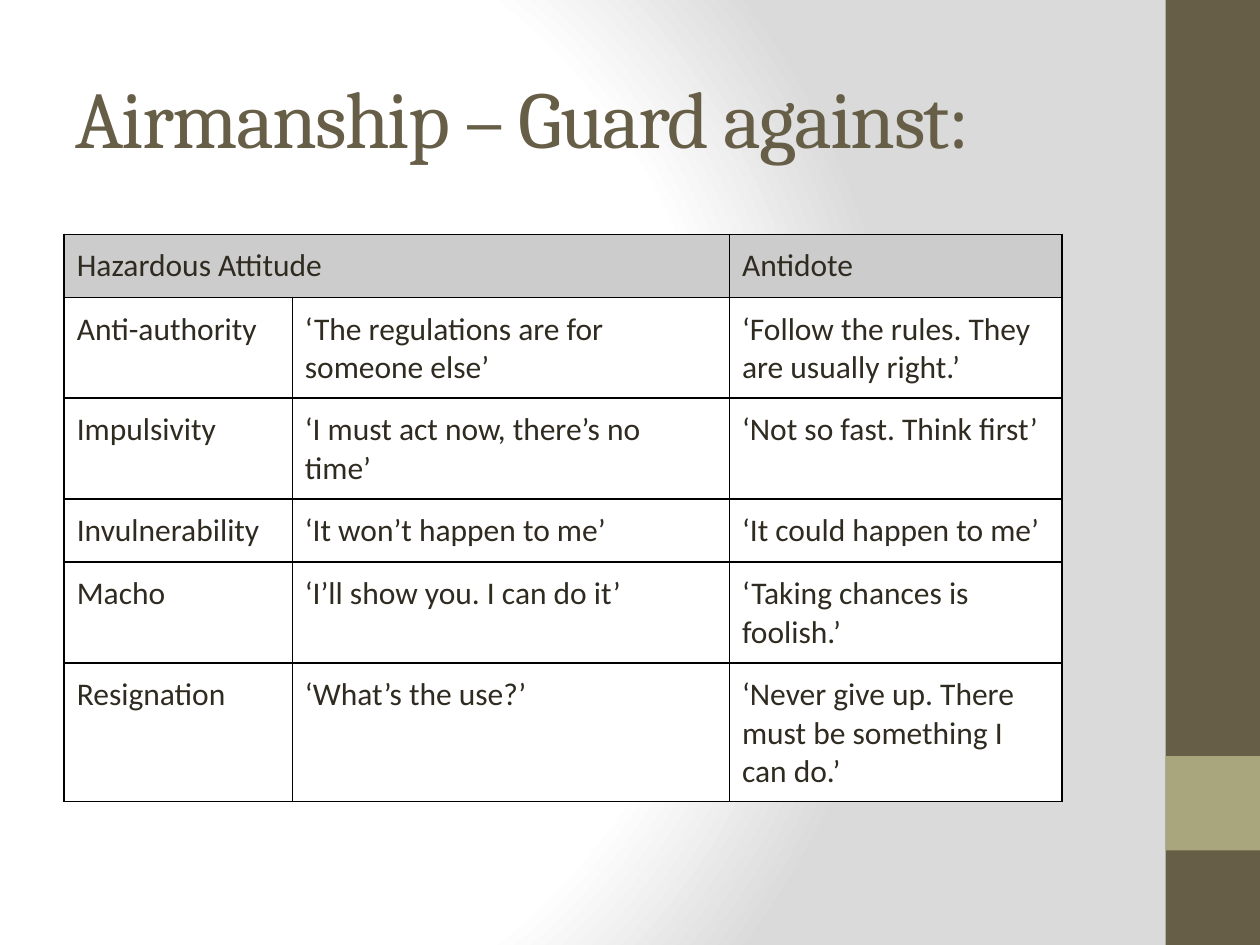
from pptx import Presentation, oxml
from pptx import util as u
from pptx.dml.color import RGBColor
from pptx.enum import shapes, text
from pptx.oxml import ns

INK, BROWN, SAGE = "2F2B20", "675E47", "A9A57C"
WHITE, HEADER, BORDER = "FFFFFF", "CCCCCC", "000000"
BACKDROP_STOPS = [(0, WHITE), (75, WHITE), (100, "DADADA")]

COLUMN_WIDTHS = [1.81, 3.47, 2.64]
ROW_HEIGHT = 0.42
ATTITUDES = [
    ("Hazardous Attitude", "", "Antidote"),
    ("Anti-authority", "‘The regulations are for\nsomeone else’",
     "‘Follow the rules. They are usually right.’"),
    ("Impulsivity", "‘I must act now, there’s no\ntime’",
     "‘Not so fast. Think first’"),
    ("Invulnerability", "‘It won’t happen to me’", "‘It could happen to me’"),
    ("Macho", "‘I’ll show you. I can do it’", "‘Taking chances is foolish.’"),
    ("Resignation", "‘What’s the use?’",
     "‘Never give up. There must be something I can do.’"),
]


def rgb(value):
    return RGBColor.from_string(value)


def apply(target, values):
    for name, value in values.items():
        setattr(target, name, value)


class SlideBuilder:
    heading = {"name": "Cambria", "size": u.Pt(46)}
    body = {"name": "Calibri", "size": u.Pt(18)}
    cell_format = {f"margin_{side}": u.Inches(0.1)
                   for side in ("left", "right", "top", "bottom")}

    def __init__(self, slide):
        self.slide = slide

    def backdrop(self, stops):
        """Fill the background with a circular gradient."""
        marks = "".join(
            f'<a:gs pos="{position * 1000}"><a:srgbClr val="{color}"/></a:gs>'
            for position, color in stops)
        self.slide.element.cSld.insert(0, oxml.parse_xml(
            f'<p:bg {ns.nsdecls("p", "a")}><p:bgPr><a:gradFill rotWithShape="1">'
            f'<a:gsLst>{marks}</a:gsLst><a:path path="circle">'
            '<a:fillToRect l="20000" t="50000" r="100000" b="50000"/></a:path>'
            '</a:gradFill><a:effectLst/></p:bgPr></p:bg>'))

    def block(self, box, color):
        bar = self.slide.shapes.add_shape(
            shapes.MSO_SHAPE.RECTANGLE, *map(u.Inches, box))
        bar.shadow.inherit = False
        bar.fill.solid()
        bar.fill.fore_color.rgb = rgb(color)
        bar.line.fill.background()

    def set_text(self, frame, content, font, color):
        frame.text = content
        for paragraph in frame.paragraphs:
            for run in paragraph.runs:
                apply(run.font, font)
                run.font.color.rgb = rgb(color)

    def title(self, box, content):
        frame = self.slide.shapes.add_textbox(*map(u.Inches, box)).text_frame
        apply(frame, {"word_wrap": True,
                      "vertical_anchor": text.MSO_ANCHOR.MIDDLE})
        self.set_text(frame, content, self.heading, BROWN)
        frame.paragraphs[0].runs[0].font._element.set("spc", "-100")

    def outline(self, cell):
        """Draw thin lines on all four sides of a table cell."""
        properties = cell._tc.get_or_add_tcPr()
        for index, side in enumerate(("lnL", "lnR", "lnT", "lnB")):
            properties.insert(index, oxml.parse_xml(
                f'<a:{side} {ns.nsdecls("a")} w="{u.Pt(1)}"><a:solidFill>'
                f'<a:srgbClr val="{BORDER}"/></a:solidFill></a:{side}>'))

    def table(self, box, rows, widths):
        holder = self.slide.shapes.add_table(
            len(rows), len(widths), *map(u.Inches, box))
        grid = holder.table
        for column, width in zip(grid.columns, widths):
            column.width = u.Inches(width)
        for r, row in enumerate(rows):
            grid.rows[r].height = u.Inches(ROW_HEIGHT)
            for c, content in enumerate(row):
                cell = grid.cell(r, c)
                apply(cell, self.cell_format)
                cell.fill.solid()
                cell.fill.fore_color.rgb = rgb(WHITE if r else HEADER)
                self.outline(cell)
                self.set_text(cell.text_frame, content, self.body, INK)
        grid.cell(0, 0).merge(grid.cell(0, 1))
        holder.height = u.Inches(box[3])


def main():
    deck = Presentation()
    apply(deck, {"slide_width": u.Inches(10), "slide_height": u.Inches(7.5)})
    builder = SlideBuilder(deck.slides.add_slide(deck.slide_layouts[6]))
    builder.backdrop(BACKDROP_STOPS)
    builder.block((9.25, 0, 0.75, 7.5), BROWN)
    builder.block((9.25, 6, 0.75, 0.75), SAGE)
    builder.title((0.5, 0.3, 8.33, 1.25), "Airmanship – Guard against:")
    builder.table((0.51, 1.86, 7.92, 4.5), ATTITUDES, COLUMN_WIDTHS)
    deck.save("out.pptx")


if __name__ == "__main__":
    main()
